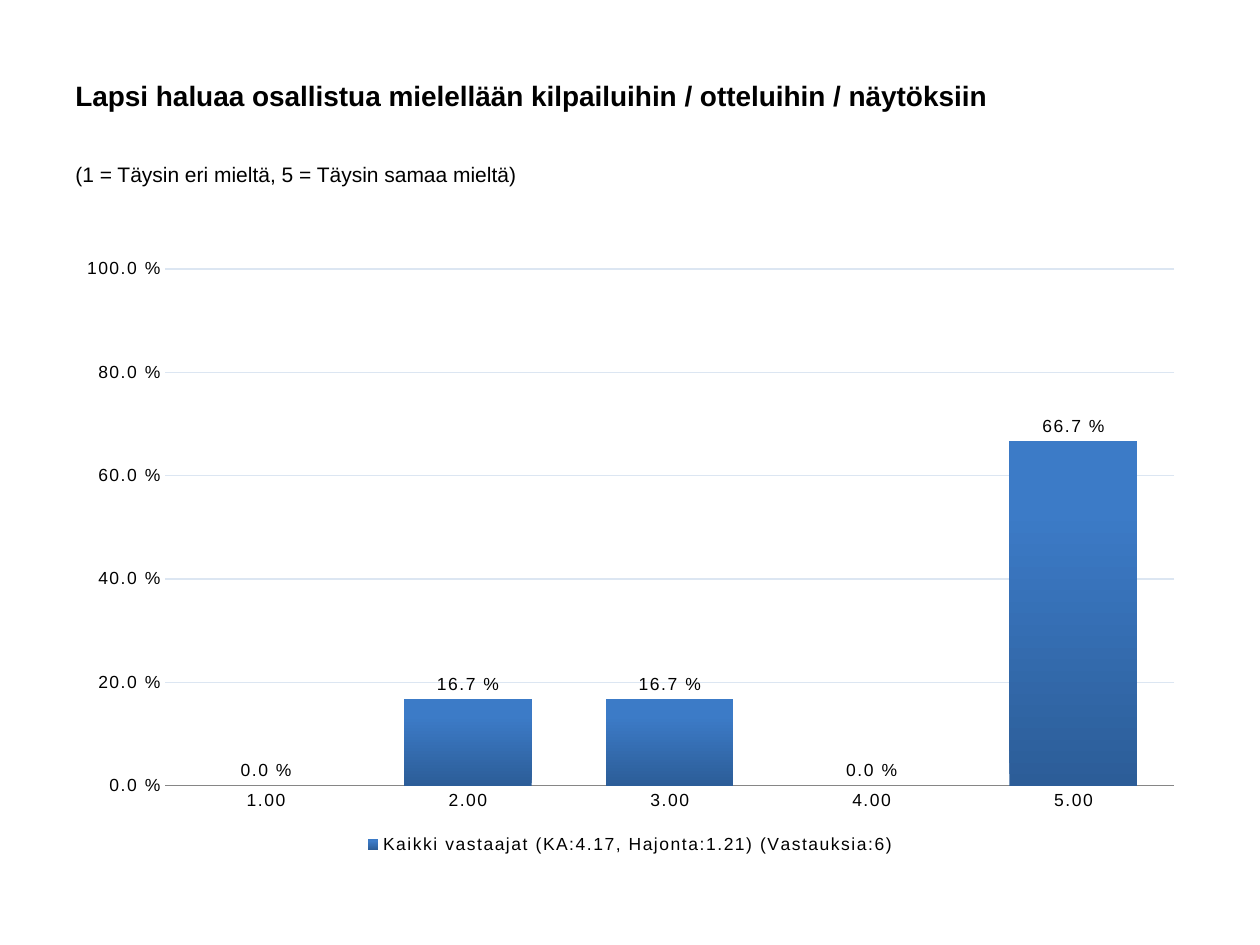
from lxml import etree
from pptx import Presentation
from pptx import util as u
from pptx.chart.data import CategoryChartData
from pptx.dml.color import RGBColor
from pptx.enum import chart as ch, text
from pptx.oxml import ns, parse_xml

Pt = u.Pt
FORM = r"0.0\ %"
SCORES = {"1.00": 0, "2.00": 0.167, "3.00": 0.167, "4.00": 0, "5.00": 0.667}


def color(code):
    return RGBColor.from_string(code)


class Deck:
    face = "Arial"
    ink = "000000"
    grid = "DCE6F2"
    axis = "868686"
    bar = ("2C5D98", "3C7BC7")

    def __init__(self, prs):
        self.slide = prs.slides.add_slide(prs.slide_layouts[6])

    def style(self, font, size, bold=False):
        font.name, font.size, font.bold = self.face, Pt(size), bold
        font.color.rgb = color(self.ink)

    def label(self, words, box, size, bold=False, anchor=text.MSO_ANCHOR.TOP):
        frame = self.slide.shapes.add_textbox(*map(Pt, box)).text_frame
        frame.word_wrap = True
        frame.vertical_anchor = anchor
        para = frame.paragraphs[0]
        para.text = words
        self.style(para.font, size, bold)

    def chart(self, name, scores, box):
        data = CategoryChartData(number_format=FORM)
        data.categories = list(scores)
        data.add_series(name, list(scores.values()))
        chart = self.slide.shapes.add_chart(
            ch.XL_CHART_TYPE.COLUMN_CLUSTERED, *map(Pt, box), data).chart
        chart.has_title = False
        chart.has_legend = True
        legend = chart.legend
        legend.position = ch.XL_LEGEND_POSITION.BOTTOM
        legend.include_in_layout = False

        plot = chart.plots[0]
        plot.gap_width = 58
        plot.vary_by_categories = False
        plot.has_data_labels = True
        tags = plot.data_labels
        tags.show_value = True
        tags.number_format, tags.number_format_is_linked = FORM, False
        tags.position = ch.XL_LABEL_POSITION.OUTSIDE_END
        self.shade(plot.series[0].format.fill)

        cat, val = chart.category_axis, chart.value_axis
        for axis in (cat, val):
            axis.major_tick_mark = axis.minor_tick_mark = ch.XL_TICK_MARK.NONE
        cat.format.line.color.rgb = color(self.axis)
        val.format.line.fill.background()
        val.minimum_scale, val.maximum_scale, val.major_unit = 0, 1, 0.2
        val.tick_labels.number_format = FORM
        val.tick_labels.number_format_is_linked = False
        line = val.major_gridlines.format.line
        line.color.rgb, line.width = color(self.grid), Pt(0.75)

        for item in (chart, legend, tags, cat.tick_labels, val.tick_labels):
            self.style(item.font, 10)
        root = chart.element
        for props in root.iter(ns.qn("a:defRPr")):
            props.set("spc", "100")
        self.place(root, x=0.09, y=0.04, w=0.89, h=0.84)

    def shade(self, fill):
        fill.gradient()
        fill.gradient_angle = 90
        for stop, code, pos in zip(fill.gradient_stops, self.bar, (0, 0.8)):
            stop.color.rgb, stop.position = color(code), pos

    def place(self, root, **sides):
        """Fix the inner plot area as fractions of the chart."""
        area = root.find(".//" + ns.qn("c:plotArea"))
        old = area.find(ns.qn("c:layout"))
        if old is not None:
            area.remove(old)
        layout = parse_xml("<c:layout %s/>" % ns.nsdecls("c"))
        manual = etree.SubElement(layout, ns.qn("c:manualLayout"))
        items = dict(layoutTarget="inner", xMode="edge", yMode="edge", **sides)
        for tag, value in items.items():
            etree.SubElement(manual, ns.qn("c:" + tag)).set("val", str(value))
        area.insert(0, layout)


def main():
    prs = Presentation()
    prs.slide_width, prs.slide_height = Pt(720), Pt(540)
    deck = Deck(prs)
    deck.label("Lapsi haluaa osallistua mielellään kilpailuihin / otteluihin / näytöksiin",
               (36, 26, 648, 57), 16, True, text.MSO_ANCHOR.MIDDLE)
    deck.label("(1 = Täysin eri mieltä, 5 = Täysin samaa mieltä)",
               (36, 88.5, 648, 42.5), 12)
    deck.chart("Kaikki vastaajat (KA:4.17, Hajonta:1.21) (Vastauksia:6)",
               SCORES, (36, 139.7, 648, 351.4))
    prs.save("out.pptx")


if __name__ == "__main__":
    main()
